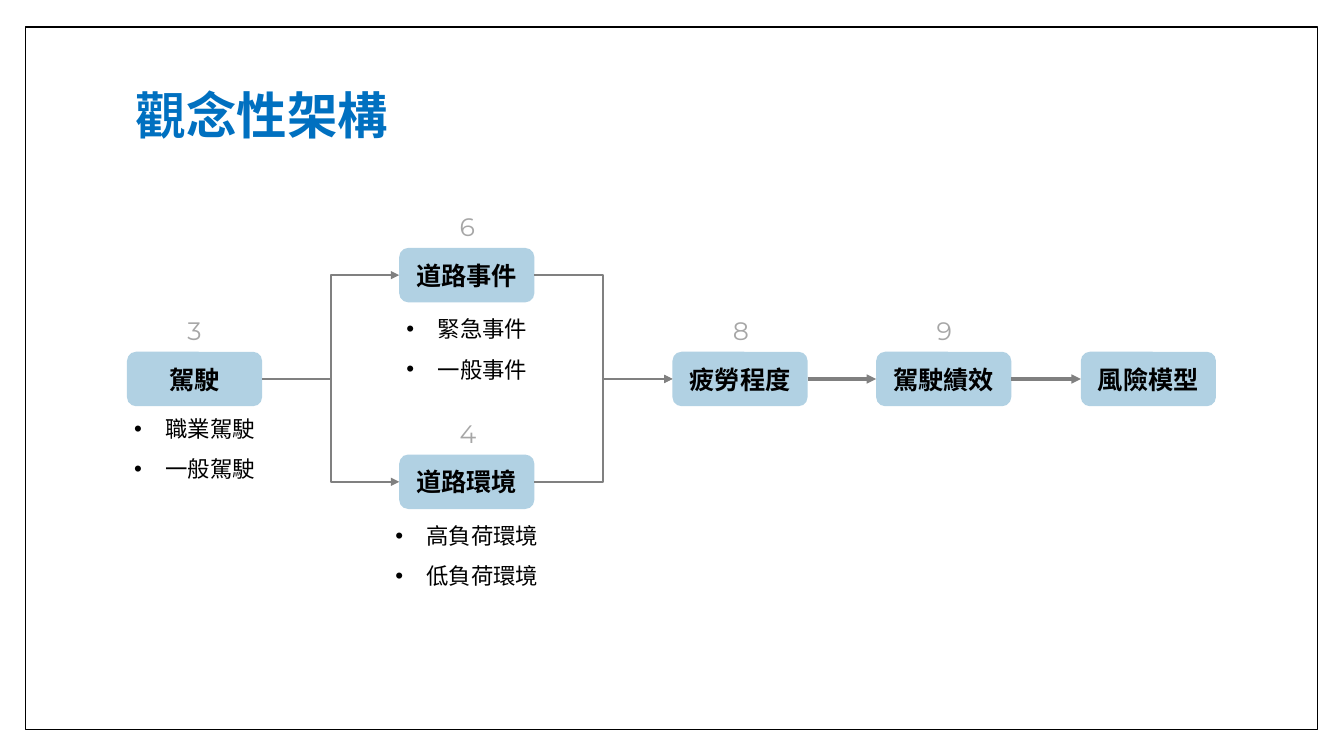
from lxml import etree
from pptx import Presentation
from pptx.dml.color import RGBColor
from pptx.enum import shapes, text
from pptx.oxml.ns import qn
from pptx.util import Inches, Pt

CJK = "Noto Sans CJK SC"
BOX_W, BOX_H = 1.34, 0.54
LEFT, RIGHT = 1, 3  # connection sites of a rounded rectangle

# name: (left, top, number, bullets, bullet width, gap above bullets)
NODES = {
    "駕駛": (1.26, 3.49, "3", ["職業駕駛", "一般駕駛"], 1.56, 0),
    "道路事件": (3.96, 2.46, "6", ["緊急事件", "一般事件"], 1.56, 0.04),
    "道路環境": (3.96, 4.51, "4", ["高負荷環境", "低負荷環境"], 1.71, 0.04),
    "疲勞程度": (6.67, 3.49, "8", [], 0, 0),
    "駕駛績效": (8.69, 3.49, "9", [], 0, 0),
    "風險模型": (10.72, 3.49, "", [], 0, 0),
}
LINKS = [
    ("駕駛", "道路事件"),
    ("駕駛", "道路環境"),
    ("道路事件", "疲勞程度"),
    ("道路環境", "疲勞程度"),
    ("疲勞程度", "駕駛績效"),
    ("駕駛績效", "風險模型"),
]


def color(code):
    return RGBColor.from_string(code)


def add_run(para, words, size, code, bold=False, face=CJK):
    run = para.add_run()
    run.text = words
    font = run.font
    font.size, font.bold, font.name = Pt(size), bold, face
    font.color.rgb = color(code)
    etree.SubElement(run._r.get_or_add_rPr(), qn("a:ea"), typeface=face)


def add_text(slide, left, top, width, height, anchor=text.MSO_ANCHOR.MIDDLE):
    frame = slide.shapes.add_textbox(
        Inches(left), Inches(top), Inches(width), Inches(height)).text_frame
    frame.word_wrap = True
    frame.vertical_anchor = anchor
    return frame


def add_frame(slide, left, top, width, height):
    rect = slide.shapes.add_shape(
        shapes.MSO_SHAPE.RECTANGLE,
        Inches(left), Inches(top), Inches(width), Inches(height))
    rect.shadow.inherit = False
    rect.fill.solid()
    rect.fill.fore_color.rgb = color("FFFFFF")
    rect.line.color.rgb = color("000000")
    rect.line.width = Pt(1)


def add_title(slide, left, top, width, height):
    para = add_text(slide, left, top, width, height).paragraphs[0]
    para.line_spacing = 0.9
    add_run(para, "觀念性架構", 36, "0070C0", True)


def add_list(slide, items, left, top, width):
    frame = add_text(slide, left, top, width, 0.71)
    for i, item in enumerate(items):
        para = frame.paragraphs[0] if i == 0 else frame.add_paragraph()
        para.alignment = text.PP_ALIGN.CENTER
        para.line_spacing = 1.5
        props = para._p.get_or_add_pPr()
        props.set("marL", str(Inches(0.31)))
        props.set("indent", str(-Inches(0.31)))
        etree.SubElement(props, qn("a:buFont"), typeface="Arial")
        etree.SubElement(props, qn("a:buChar"), char="•")
        add_run(para, item, 16, "000000")


def add_node(slide, name, left, top, number, items, width, gap):
    """Draw a box with its number above and its bullets below."""
    box = slide.shapes.add_shape(
        shapes.MSO_SHAPE.ROUNDED_RECTANGLE,
        Inches(left), Inches(top), Inches(BOX_W), Inches(BOX_H))
    box.shadow.inherit = False
    box.fill.solid()
    box.fill.fore_color.rgb = color("B1D1E3")
    box.line.fill.background()
    box.text_frame.vertical_anchor = text.MSO_ANCHOR.MIDDLE
    para = box.text_frame.paragraphs[0]
    para.alignment = text.PP_ALIGN.CENTER
    add_run(para, name, 18, "000000", True)
    if number:
        label = add_text(slide, left + 0.5, top - 0.41, 0.59, 0.4,
                         text.MSO_ANCHOR.TOP)
        add_run(label.paragraphs[0], number, 18, "A6A6A6", face="Montserrat")
    if items:
        add_list(slide, items, left + (BOX_W - width) / 2,
                 top + BOX_H + gap, width)
    return box


def add_link(slide, start, end):
    """Join two boxes, with an elbow when they differ in height."""
    level = start.top == end.top
    kind = shapes.MSO_CONNECTOR.STRAIGHT if level else shapes.MSO_CONNECTOR.ELBOW
    link = slide.shapes.add_connector(kind, 0, 0, 0, 0)
    link.begin_connect(start, RIGHT)
    link.end_connect(end, LEFT)
    link.line.color.rgb = color("808080")
    link.line.width = Pt(2.25 if level else 1.5)
    etree.SubElement(link.line._get_or_add_ln(), qn("a:tailEnd"), type="triangle")
    etree.SubElement(link._element.spPr, qn("a:effectLst"))


def main():
    deck = Presentation()
    deck.slide_width, deck.slide_height = Inches(13.33), Inches(7.5)
    slide = deck.slides.add_slide(deck.slide_layouts[6])
    add_frame(slide, 0.25, 0.27, 12.82, 6.97)
    add_title(slide, 1.25, 0.67, 10.8, 1.01)
    boxes = {name: add_node(slide, name, *node) for name, node in NODES.items()}
    for start, end in LINKS:
        add_link(slide, boxes[start], boxes[end])
    deck.save("out.pptx")


if __name__ == "__main__":
    main()
